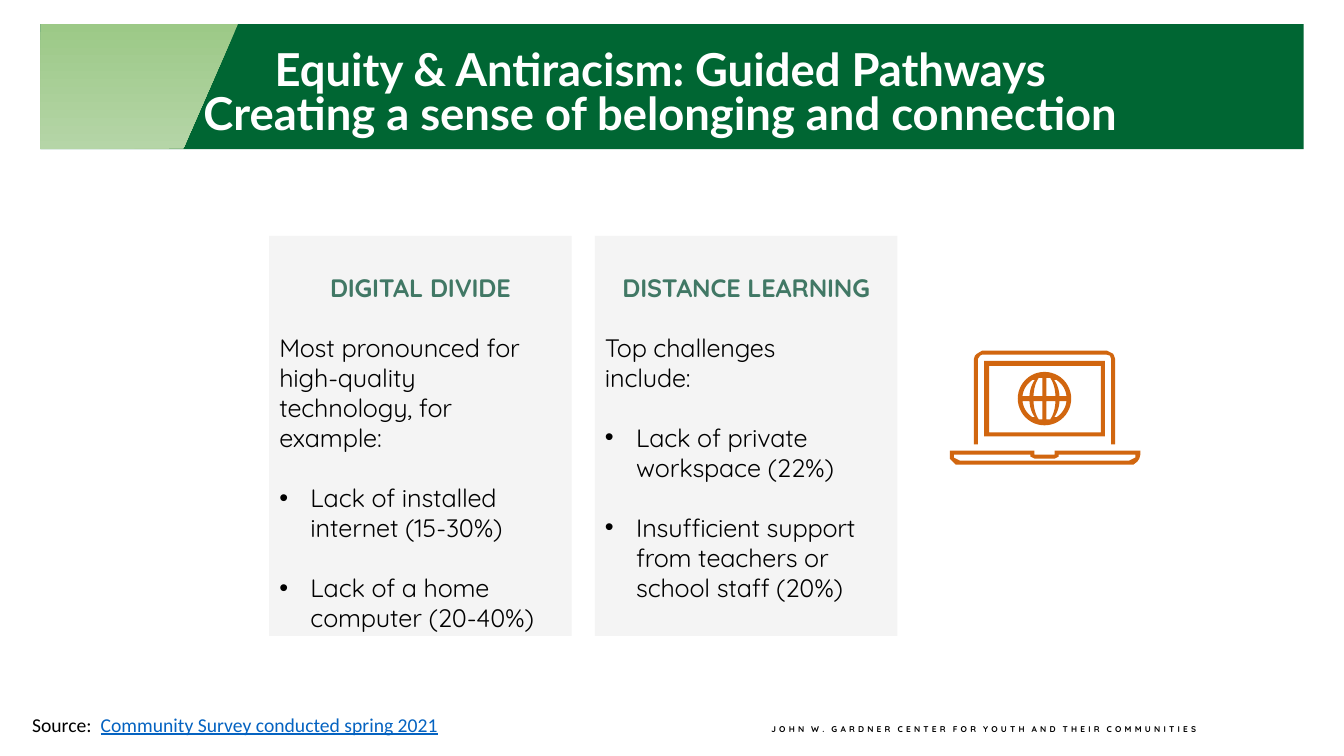
from math import cos, pi, sin, sqrt

from lxml import etree
from pptx import Presentation
from pptx.dml.color import RGBColor
from pptx.enum.shapes import MSO_SHAPE
from pptx.enum.text import MSO_ANCHOR, MSO_AUTO_SIZE, PP_ALIGN
from pptx.oxml.ns import qn
from pptx.util import Inches, Pt

COLORS = {
    "white": "FFFFFF",
    "black": "000000",
    "banner": "006633",
    "wedge_top": "9CC987",
    "wedge_bottom": "B5D5A7",
    "card": "F4F4F4",
    "heading": "417865",
    "laptop": "D1660F",
    "link": "0563C1",
}

CARDS = [
    (2.67, "DIGITAL DIVIDE",
     "Most pronounced for high-quality technology, for example:",
     ["Lack of installed internet (15-30%)",
      "Lack of a home computer (20-40%)"]),
    (5.9, "DISTANCE LEARNING",
     "Top challenges include:",
     ["Lack of private workspace (22%)",
      "Insufficient support from teachers or school staff (20%)"]),
]

CENTER_NAME = ["J O H N", "W .", "G A R D N E R", "C E N T E R", "F O R", "Y O U T H",
               "A N D", "T H E I R", "C O M M U N I T I E S"]


def rgb(name):
    return RGBColor.from_string(COLORS[name])


def add_run(paragraph, text, font, size, color, bold=False, spacing=0):
    run = paragraph.add_run()
    run.text = text
    run.font.name = font
    run.font.size = Pt(size)
    run.font.bold = bold
    run.font.color.rgb = rgb(color)
    if spacing:
        run.font._element.set("spc", str(round(spacing * 100)))
    return run


def set_indents(paragraph, left, right, hanging=0):
    properties = paragraph._p.get_or_add_pPr()
    properties.set("marL", str(Inches(left)))
    properties.set("marR", str(Inches(right)))
    properties.set("indent", str(-Inches(hanging)))


def add_bullet(paragraph):
    properties = paragraph._p.get_or_add_pPr()
    etree.SubElement(properties, qn("a:buFont")).set("typeface", "Arial")
    etree.SubElement(properties, qn("a:buChar")).set("char", "•")


def add_rectangle(slide, left, top, width, height, color):
    shape = slide.shapes.add_shape(
        MSO_SHAPE.RECTANGLE, Inches(left), Inches(top), Inches(width), Inches(height))
    shape.shadow.inherit = False
    shape.fill.solid()
    shape.fill.fore_color.rgb = rgb(color)
    shape.line.fill.background()
    return shape


def add_outline(slide, contours):
    """Build one freeform from closed contours; inner contours become holes."""
    builder = None
    for contour in contours:
        points = [(Inches(x), Inches(y)) for x, y in contour]
        if builder is None:
            builder = slide.shapes.build_freeform(*points[0])
        else:
            builder.move_to(*points[0])
        builder.add_line_segments(points[1:], close=True)
    shape = builder.convert_to_shape()
    shape.shadow.inherit = False
    shape.line.fill.background()
    return shape


def add_card(slide, left, heading, introduction, bullets):
    card = add_rectangle(slide, left, 2.34, 3, 3.97, "card")
    frame = card.text_frame
    frame.word_wrap = True
    frame.vertical_anchor = MSO_ANCHOR.TOP
    frame.margin_left = frame.margin_right = frame.margin_bottom = 0
    frame.margin_top = Inches(0.36)

    paragraph = frame.paragraphs[0]
    paragraph.alignment = PP_ALIGN.CENTER
    add_run(paragraph, heading, "Quicksand", 18, "heading", bold=True, spacing=-0.1)

    for index, text in enumerate([introduction] + bullets):
        paragraph = frame.add_paragraph()
        paragraph.alignment = PP_ALIGN.LEFT
        paragraph.space_before = Pt(21.1)
        if index == 0:
            set_indents(paragraph, 0.1, 0.4)
        else:
            set_indents(paragraph, 0.41, 0.15, hanging=0.31)
            add_bullet(paragraph)
        add_run(paragraph, text, "Quicksand", 18, "black", spacing=-0.1)


def rectangle_points(left, top, right, bottom):
    return [(left, top), (right, top), (right, bottom), (left, bottom)]


def globe_contours(center_x, center_y):
    """A disc with a lens and a crescent cut out of each quadrant."""
    radius, inner, polar = 0.265, 0.22, 0.24
    lens_width, meridian_width = 0.11, 0.15
    contours = [[(center_x + radius * cos(step * pi / 24),
                  center_y + radius * sin(step * pi / 24)) for step in range(48)]]
    heights = [0.025 + 0.02 * step for step in range(10)]

    def ellipse_x(width, height, y):
        return width * sqrt(1 - (y / height) ** 2)

    lens = [(0.02, 0.025)] + [(ellipse_x(lens_width, polar, y), y) for y in heights]
    lens.append((0.02, 0.205))
    crescent = [(ellipse_x(inner, inner, y), y) for y in heights[:-1]]
    crescent += [(ellipse_x(meridian_width, polar, y), y) for y in reversed(heights[:-1])]
    for side in (-1, 1):
        for pole in (-1, 1):
            for hole in (lens, crescent):
                contours.append([(center_x + side * x, center_y + pole * y)
                                 for x, y in hole])
    return contours


def add_laptop(slide):
    lid = [(9.66, 4.41), (9.66, 3.56), (9.67, 3.53), (9.69, 3.51), (9.74, 3.48),
           (10.98, 3.48), (11.04, 3.51), (11.05, 3.53), (11.06, 3.56), (11.06, 4.41),
           (11.02, 4.41), (11.02, 3.56), (11.01, 3.53), (10.98, 3.52),
           (9.74, 3.52), (9.72, 3.53), (9.7, 3.56), (9.7, 4.41)]
    frame = [rectangle_points(9.76, 3.58, 10.96, 4.33),
             rectangle_points(9.81, 3.63, 10.92, 4.29)]
    base = [(9.42, 4.47), (10.26, 4.47), (10.26, 4.51), (10.46, 4.51),
            (10.46, 4.47), (11.31, 4.47), (11.31, 4.51), (11.3, 4.55),
            (11.28, 4.58), (11.24, 4.61), (11.2, 4.61), (9.52, 4.61),
            (9.48, 4.61), (9.45, 4.58), (9.42, 4.55)]
    base_hole = [(9.46, 4.51), (10.22, 4.51), (10.22, 4.53), (10.26, 4.55),
                 (10.46, 4.55), (10.5, 4.53), (10.5, 4.51), (11.26, 4.51),
                 (11.26, 4.54), (11.2, 4.57), (9.52, 4.57), (9.46, 4.54)]
    for contours in ([lid] + frame + globe_contours(10.36, 3.955), [base, base_hole]):
        part = add_outline(slide, contours)
        part.fill.solid()
        part.fill.fore_color.rgb = rgb("laptop")


def add_text_box(slide, left, top, width, height):
    box = slide.shapes.add_textbox(
        Inches(left), Inches(top), Inches(width), Inches(height))
    return box.text_frame


def add_footer(slide):
    frame = add_text_box(slide, 7.64, 7.17, 5.48, 0.11)
    frame.word_wrap = True
    frame.vertical_anchor = MSO_ANCHOR.MIDDLE
    frame.margin_left = frame.margin_top = Inches(0.01)
    frame.margin_right = frame.margin_bottom = 0
    paragraph = frame.paragraphs[0]
    for index, word in enumerate(CENTER_NAME):
        if index:
            add_run(paragraph, " ", "Quicksand", 6, "black", bold=True, spacing=3)
        add_run(paragraph, word, "Quicksand", 6, "black", bold=True, spacing=0.3)

    frame = add_text_box(slide, 0.22, 7.02, 4.26, 0.34)
    frame.word_wrap = False
    paragraph = frame.paragraphs[0]
    add_run(paragraph, "Source:", "Calibri", 14, "black")
    add_run(paragraph, " ", "Calibri", 14, "black", spacing=3.2)
    survey = add_run(paragraph, "Community Survey conducted spring 2021",
                     "Calibri", 14, "link")
    survey.font.underline = True


def add_banner(slide):
    add_rectangle(slide, 0.4, 0.24, 12.53, 1.24, "banner")
    wedge = add_outline(slide, [[(0.4, 0.24), (2.36, 0.24), (1.82, 1.47), (0.4, 1.48)]])
    wedge.fill.gradient()
    wedge.fill.gradient_angle = 270
    for stop, color in zip(wedge.fill.gradient_stops, ("wedge_top", "wedge_bottom")):
        stop.color.rgb = rgb(color)


def format_title(slide, lines):
    title = slide.shapes.title
    title.left, title.top = Inches(0.8), Inches(0.42)
    title.width, title.height = Inches(11.5), Inches(1.05)
    frame = title.text_frame
    frame.word_wrap = True
    frame.auto_size = MSO_AUTO_SIZE.NONE
    frame.vertical_anchor = MSO_ANCHOR.MIDDLE
    for index, line in enumerate(lines):
        paragraph = frame.add_paragraph() if index else frame.paragraphs[0]
        paragraph.alignment = PP_ALIGN.CENTER
        paragraph.line_spacing = 0.8
        paragraph.space_before = Pt(0)
        add_run(paragraph, line, "Lato", 32.4, "white", bold=True)
    # Bring the title in front of the banner
    slide.shapes._spTree.append(title._element)


def main():
    presentation = Presentation()
    presentation.slide_width = Inches(13.33)
    presentation.slide_height = Inches(7.5)
    slide = presentation.slides.add_slide(presentation.slide_layouts[5])

    # Findings
    for card in CARDS:
        add_card(slide, *card)
    add_laptop(slide)

    # Footer and source
    add_footer(slide)

    # Banner and title
    add_banner(slide)
    format_title(slide, ["Equity & Antiracism: Guided Pathways",
                         "Creating a sense of belonging and connection"])

    presentation.save("out.pptx")


if __name__ == "__main__":
    main()
